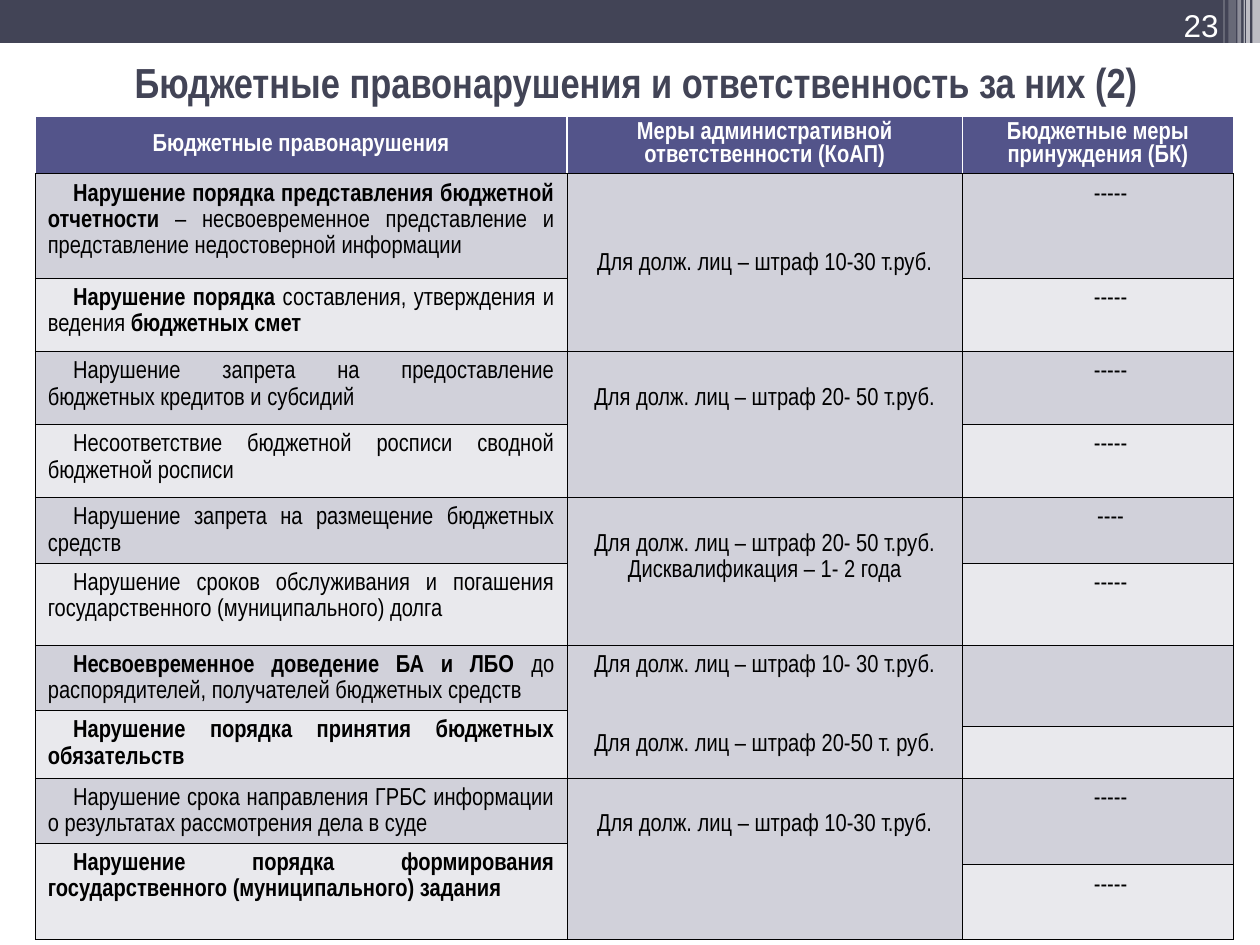
from dataclasses import dataclass

from lxml import etree
from pptx import Presentation
from pptx import util as u
from pptx.dml.color import RGBColor
from pptx.enum import shapes, text
from pptx.oxml import ns


@dataclass(frozen=True)
class Theme:
    bar: str = "424456"
    header: str = "53548A"
    dark_row: str = "D1D1DA"
    light_row: str = "E9E9ED"
    white: str = "FFFFFF"
    black: str = "000000"
    narrow: str = "Arial Narrow"
    plain: str = "Arial"
    title_size: int = 24
    number_size: int = 18
    table_size: int = 14
    line_pitch: int = 15


THEME = Theme()
ALIGN = text.PP_ALIGN
ANCHOR = text.MSO_ANCHOR

STRIPES = [(9.94, 0.06, 0.68, 65), (9.89, 0.03, 0.68, 65), (9.87, 0.01, 0.68, 60),
           (9.82, 0.03, 0.68, 40), (9.75, 0.06, 0.64, 20), (9.71, 0.01, 0.64, 30)]

COLUMN_WIDTHS = [4.22, 3.14, 2.15]
ROW_HEIGHTS = [0.46, 0.83, 0.58, 0.58, 0.58, 0.52, 0.65, 0.52, 0.13, 0.4, 0.52, 0.17, 0.59]
HEADERS = ["Бюджетные правонарушения", "Меры административной ответственности (КоАП)",
           "Бюджетные меры принуждения (БК)"]

VIOLATIONS = [
    (1, "*Нарушение порядка представления бюджетной отчетности* – несвоевременное "
        "представление и представление недостоверной информации"),
    (1, "*Нарушение порядка* составления, утверждения и ведения *бюджетных смет*"),
    (1, "Нарушение запрета на предоставление бюджетных кредитов и субсидий"),
    (1, "Несоответствие бюджетной росписи сводной бюджетной росписи"),
    (1, "Нарушение запрета на размещение бюджетных средств"),
    (1, "Нарушение сроков обслуживания и погашения государственного (муниципального) долга"),
    (1, "*Несвоевременное доведение БА и ЛБО* до распорядителей, получателей бюджетных средств"),
    (2, "*Нарушение порядка принятия бюджетных обязательств*"),
    (1, "Нарушение срока направления ГРБС информации о результатах рассмотрения дела в суде"),
    (2, "*Нарушение порядка формирования государственного (муниципального) задания*"),
]
PENALTIES = [
    (2, ["Для долж. лиц – штраф 10-30 т.руб."], ANCHOR.MIDDLE, 0.05, 0),
    (2, ["Для долж. лиц – штраф 20- 50 т.руб."], ANCHOR.TOP, 0.26, 0),
    (2, ["Для долж. лиц – штраф 20- 50 т.руб.", "Дисквалификация – 1- 2 года"],
     ANCHOR.TOP, 0.26, 0),
    (3, ["Для долж. лиц – штраф 10- 30 т.руб.", "Для долж. лиц – штраф 20-50 т. руб."],
     ANCHOR.TOP, 0.05, 30),
    (3, ["Для долж. лиц – штраф 10-30 т.руб."], ANCHOR.TOP, 0.26, 0),
]
COERCION = [(1, "-----"), (1, "-----"), (1, "-----"), (1, "-----"), (1, "----"),
            (1, "-----"), (2, ""), (1, ""), (2, "-----"), (1, "-----")]


def style_font(font, size, color, bold=False, name=THEME.narrow):
    font.size = u.Pt(size)
    font.name = name
    font.bold = bold
    font.color.rgb = RGBColor.from_string(color)


def add_rectangle(slide, left, top, width, height, color, opacity=100):
    shape = slide.shapes.add_shape(shapes.MSO_SHAPE.RECTANGLE, u.Inches(left), u.Inches(top),
                                   u.Inches(width), u.Inches(height))
    shape.shadow.inherit = False
    shape.line.fill.background()
    shape.fill.solid()
    shape.fill.fore_color.rgb = RGBColor.from_string(color)
    if opacity < 100:
        color_element = shape.fill._xPr.find(".//" + ns.qn("a:srgbClr"))
        etree.SubElement(color_element, ns.qn("a:alpha"), val=str(opacity * 1000))


def add_top_bar(slide, left, top, width, height):
    add_rectangle(slide, left, top, width, height, THEME.bar)
    for offset, stripe_width, stripe_height, opacity in STRIPES:
        add_rectangle(slide, left + offset, top, stripe_width, stripe_height,
                      THEME.white, opacity)


def add_label(slide, left, top, width, height, content, align, anchor, **font):
    shape = slide.shapes.add_textbox(u.Inches(left), u.Inches(top),
                                     u.Inches(width), u.Inches(height))
    frame = shape.text_frame
    frame.word_wrap = True
    frame.vertical_anchor = anchor
    frame.text = content
    paragraph = frame.paragraphs[0]
    paragraph.alignment = align
    style_font(paragraph.runs[0].font, **font)


def set_borders(cell, color, width, bottom_color, bottom_width):
    properties = cell._tc.get_or_add_tcPr()
    for side in "LRTB":
        side_color, side_width = (bottom_color, bottom_width) if side == "B" else (color, width)
        line = etree.SubElement(properties, ns.qn(f"a:ln{side}"), w=str(u.Pt(side_width)))
        fill = etree.SubElement(line, ns.qn("a:solidFill"))
        etree.SubElement(fill, ns.qn("a:srgbClr"), val=side_color)


def paint_cell(cell, fill, border=THEME.black, border_width=0.5):
    set_borders(cell, border, border_width, THEME.black, 0.5)
    cell.fill.solid()
    cell.fill.fore_color.rgb = RGBColor.from_string(fill)


def write_body(cell, lines, align, indent=0, gap=0):
    frame = cell.text_frame
    for index, line in enumerate(lines):
        paragraph = frame.paragraphs[0] if index == 0 else frame.add_paragraph()
        paragraph.alignment = align
        paragraph.line_spacing = u.Pt(THEME.line_pitch)
        if index and gap:
            paragraph.space_before = u.Pt(gap)
        if indent:
            properties = paragraph._p.get_or_add_pPr()
            properties.set("marL", "0")
            properties.set("indent", str(u.Inches(indent)))
        for position, part in enumerate(line.split("*")):
            if part:
                run = paragraph.add_run()
                run.text = part
                style_font(run.font, THEME.table_size, THEME.black, position % 2 == 1)


def place_spans(table, column, spans, fills):
    row = 1
    for index, span in enumerate(spans):
        for covered in range(row, row + span):
            paint_cell(table.cell(covered, column), fills[index % len(fills)])
        cell = table.cell(row, column)
        if span > 1:
            cell.merge(table.cell(row + span - 1, column))
        yield cell
        row += span


def write_header(table):
    for cell, label in zip(table.rows[0].cells, HEADERS):
        paint_cell(cell, THEME.header, THEME.white, 1)
        cell.margin_left = cell.margin_right = cell.margin_top = cell.margin_bottom = 0
        cell.vertical_anchor = ANCHOR.MIDDLE
        cell.text_frame.text = label
        paragraph = cell.text_frame.paragraphs[0]
        paragraph.alignment = ALIGN.CENTER
        style_font(paragraph.runs[0].font, THEME.table_size, THEME.white, True)


def add_violations_table(slide, left, top, width, height):
    table = slide.shapes.add_table(len(ROW_HEIGHTS), len(COLUMN_WIDTHS), u.Inches(left),
                                   u.Inches(top), u.Inches(width), u.Inches(height)).table
    table.first_row = table.horz_banding = False
    for column, column_width in zip(table.columns, COLUMN_WIDTHS):
        column.width = u.Inches(column_width)
    for row, row_height in zip(table.rows, ROW_HEIGHTS):
        row.height = u.Inches(row_height)
    write_header(table)

    bands = [THEME.dark_row, THEME.light_row]
    for column, entries, align in ((0, VIOLATIONS, ALIGN.JUSTIFY), (2, COERCION, ALIGN.CENTER)):
        cells = place_spans(table, column, [span for span, _ in entries], bands)
        for cell, (_, content) in zip(cells, entries):
            if content:
                write_body(cell, [content], align, indent=0.2)

    cells = place_spans(table, 1, [entry[0] for entry in PENALTIES], [THEME.dark_row])
    for cell, (_, lines, anchor, inset, gap) in zip(cells, PENALTIES):
        cell.vertical_anchor = anchor
        cell.margin_top = u.Inches(inset)
        write_body(cell, lines, ALIGN.CENTER, gap=gap)


def main():
    presentation = Presentation()
    presentation.slide_width = u.Inches(10)
    presentation.slide_height = u.Inches(7.5)
    slide = presentation.slides.add_slide(presentation.slide_layouts[6])
    add_top_bar(slide, 0, 0, 10, 0.34)
    add_violations_table(slide, 0.28, 0.92, sum(COLUMN_WIDTHS), sum(ROW_HEIGHTS))
    add_label(slide, 0.97, 0.37, 8.43, 0.55,
              "Бюджетные правонарушения и ответственность за них (2)",
              ALIGN.LEFT, ANCHOR.MIDDLE, size=THEME.title_size, color=THEME.bar, bold=True)
    add_label(slide, 8.03, 0, 1.74, 0.34, "23", ALIGN.RIGHT, ANCHOR.TOP,
              size=THEME.number_size, color=THEME.white, name=THEME.plain)
    presentation.save("out.pptx")


if __name__ == "__main__":
    main()
